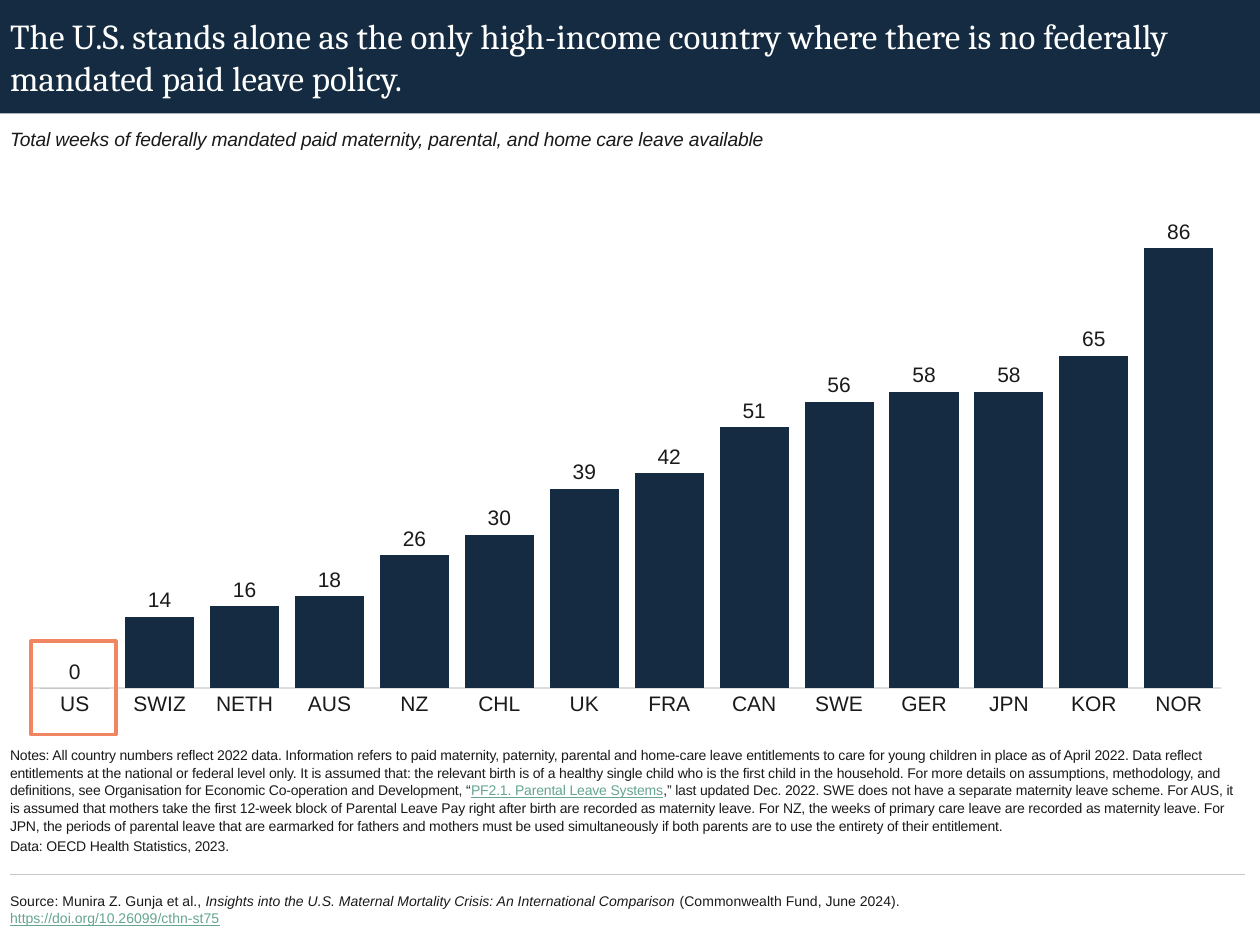
import pptx
import pptx.chart.data
import pptx.dml.color
import pptx.enum.chart
import pptx.enum.shapes
import pptx.enum.text
import pptx.oxml
import pptx.oxml.ns
import pptx.util
from pptx.util import Inches, Pt

RGBColor = pptx.dml.color.RGBColor
NAVY = RGBColor(0x14, 0x2B, 0x41)
INK = RGBColor(0x1A, 0x1A, 0x1A)
GREEN = RGBColor(0x65, 0xA5, 0x91)
ORANGE = RGBColor(0xF0, 0x86, 0x61)
RULE_GREY = RGBColor(0xC6, 0xC6, 0xC6)
AXIS_GREY = RGBColor(0xDD, 0xDD, 0xDD)
WHITE = RGBColor(0xFF, 0xFF, 0xFF)

MARGIN, CONTENT_WIDTH = Inches(0.08), Inches(9.8)
ANCHOR = pptx.enum.text.MSO_ANCHOR

TITLE = ("The U.S. stands alone as the only high-income country where there is "
         "no federally mandated paid leave policy.")
SUBTITLE = ("Total weeks of federally mandated paid maternity, parental, and home "
            "care leave available")
NOTES = [
    [("Notes: All country numbers reflect 2022 data. Information refers to paid maternity, "
      "paternity, parental and home-care leave entitlements to care for young children in "
      "place as of April 2022. Data reflect entitlements at the national or federal level "
      "only. It is assumed that: the relevant birth is of a healthy single child who is the "
      "first child in the household. For more details on assumptions, methodology, and "
      "definitions, see Organisation for Economic Co-operation and Development, “", ""),
     ("PF2.1. Parental Leave Systems", "link"),
     (",” last updated Dec. 2022. SWE does not have a separate maternity leave scheme. For "
      "AUS, it is assumed that mothers take the first 12-week block of Parental Leave Pay "
      "right after birth are recorded as maternity leave. For NZ, the weeks of primary care "
      "leave are recorded as maternity leave. For JPN, the periods of parental leave that are "
      "earmarked for fathers and mothers must be used simultaneously if both parents are to "
      "use the entirety of their entitlement.", "")],
    [("Data: OECD Health Statistics, 2023.", "")],
]
SOURCE = [[
    ("Source: Munira Z. Gunja et al., ", ""),
    ("Insights into the U.S. Maternal Mortality Crisis: An International Comparison", "italic"),
    (" (Commonwealth Fund, June 2024). ", ""),
    ("https://doi.org/10.26099/cthn-st75", "link"),
]]
WEEKS = {"US": 0, "SWIZ": 14, "NETH": 16, "AUS": 18, "NZ": 26, "CHL": 30, "UK": 39,
         "FRA": 42, "CAN": 51, "SWE": 56, "GER": 58, "JPN": 58, "KOR": 65, "NOR": 86}


def set_font(font, name, size, color):
    """Give a font its face, size and colour."""
    font.name, font.size = name, Pt(size)
    font.color.rgb = color


def set_frame(frame, anchor):
    """Make a text frame wrap, without margins or automatic fitting."""
    frame.word_wrap = True
    frame.auto_size = pptx.enum.text.MSO_AUTO_SIZE.NONE
    frame.vertical_anchor = anchor
    frame.margin_left = frame.margin_top = frame.margin_right = frame.margin_bottom = 0


def add_text(slide, box, paragraphs, size, anchor, tracking=0, line_spacing=1.0):
    """Add a text box of paragraphs, each a list of (text, style) runs."""
    frame = slide.shapes.add_textbox(*box).text_frame
    set_frame(frame, anchor)
    for index, runs in enumerate(paragraphs):
        paragraph = frame.add_paragraph() if index else frame.paragraphs[0]
        paragraph.line_spacing = line_spacing
        if index:
            paragraph.space_before = Pt(size * 0.2)
        set_font(paragraph.font, "Arial", size, INK)
        for text, style in runs:
            run = paragraph.add_run()
            run.text = text
            if tracking:
                run.font._element.set("spc", str(tracking))
            if style == "link":
                run.font.color.rgb = GREEN
                run.font.underline = True
            elif style == "italic":
                run.font.italic = True


def add_header(slide, box):
    """Place the title over a navy band that fills the box."""
    left, top, width, height = box
    title = slide.shapes.title
    band = slide.shapes.add_shape(pptx.enum.shapes.MSO_SHAPE.RECTANGLE, *box)
    band.shadow.inherit = False
    band.fill.solid()
    band.fill.fore_color.rgb = NAVY
    band.line.fill.background()
    title._element.addprevious(band._element)
    title.left, title.top = left + MARGIN, top
    title.width, title.height = CONTENT_WIDTH, height
    set_frame(title.text_frame, ANCHOR.MIDDLE)
    title.text_frame.text = TITLE
    paragraph = title.text_frame.paragraphs[0]
    paragraph.alignment = pptx.enum.text.PP_ALIGN.LEFT
    set_font(paragraph.font, "Cambria", 20, WHITE)


def set_plot_layout(chart, x, y, width, height):
    """Fix the inner plot area as fractions of the chart."""
    namespace = pptx.oxml.ns.nsdecls("c")
    settings = [("layoutTarget", "inner"), ("xMode", "edge"), ("yMode", "edge"),
                ("x", x), ("y", y), ("w", width), ("h", height)]
    parts = "".join(f'<c:{name} val="{value}"/>' for name, value in settings)
    layout = pptx.oxml.parse_xml(
        f"<c:layout {namespace}><c:manualLayout>{parts}</c:manualLayout></c:layout>")
    plot_area = chart._chartSpace.chart.plotArea
    for existing in plot_area.findall(pptx.oxml.ns.qn("c:layout")):
        plot_area.remove(existing)
    plot_area.insert(0, layout)


def add_leave_chart(slide, box):
    """Add the column chart of paid leave weeks by country."""
    data = pptx.chart.data.CategoryChartData(number_format="#,##0")
    data.categories = list(WEEKS)
    data.add_series("Series 1", list(WEEKS.values()))
    chart = slide.shapes.add_chart(
        pptx.enum.chart.XL_CHART_TYPE.COLUMN_CLUSTERED, *box, data).chart
    chart.has_legend = chart.has_title = False
    set_font(chart.font, "Arial", 10, INK)
    set_plot_layout(chart, 0.018, 0.023, 0.963, 0.9)

    value_axis = chart.value_axis
    value_axis.minimum_scale, value_axis.maximum_scale = 0, 100
    value_axis.has_major_gridlines = False
    value_axis.visible = False
    category_axis = chart.category_axis
    category_axis.major_tick_mark = pptx.enum.chart.XL_TICK_MARK.NONE
    category_axis.format.line.color.rgb = AXIS_GREY
    category_axis.format.line.width = Pt(0.75)
    set_font(category_axis.tick_labels.font, "Arial", 12, INK)

    plot = chart.plots[0]
    plot.gap_width = 23
    plot.vary_by_categories = False
    plot.series[0].format.fill.solid()
    plot.series[0].format.fill.fore_color.rgb = NAVY
    plot.has_data_labels = True
    labels = plot.data_labels
    labels.show_value = True
    labels.number_format, labels.number_format_is_linked = "#,##0", False
    labels.position = pptx.enum.chart.XL_LABEL_POSITION.OUTSIDE_END
    set_font(labels.font, "Arial", 12, INK)


def add_highlight(slide, box):
    """Outline the box in orange."""
    frame = slide.shapes.add_shape(pptx.enum.shapes.MSO_SHAPE.RECTANGLE, *box)
    frame.shadow.inherit = False
    frame.fill.background()
    frame.line.color.rgb = ORANGE
    frame.line.width = Pt(2.25)


def add_footer(slide, box):
    """Add the rule along the top of the box and the source below it."""
    left, top, width, height = box
    rule = slide.shapes.add_connector(
        pptx.enum.shapes.MSO_CONNECTOR.STRAIGHT, left, top, left + width, top)
    rule.line.color.rgb = RULE_GREY
    rule.line.width = Pt(0.75)
    rule._element.spPr.append(
        pptx.oxml.parse_xml(f'<a:effectLst {pptx.oxml.ns.nsdecls("a")}/>'))
    gap = Inches(0.05)
    add_text(slide, (left, top + gap, Inches(7.25), height - gap), SOURCE, 8, ANCHOR.MIDDLE)


def main():
    """Build the paid leave slide and save it."""
    presentation = pptx.Presentation()
    presentation.slide_width, presentation.slide_height = Inches(10), Inches(7.5)
    slide = presentation.slides.add_slide(presentation.slide_layouts[5])
    add_header(slide, (0, 0, presentation.slide_width, Inches(0.9)))
    add_text(slide, (MARGIN, Inches(0.97), CONTENT_WIDTH, Inches(0.27)),
             [[(SUBTITLE, "italic")]], 11, ANCHOR.MIDDLE, tracking=-10)
    add_leave_chart(slide, (MARGIN, Inches(1.3), CONTENT_WIDTH, Inches(4.51)))
    add_highlight(slide, (Inches(0.25), Inches(5.09), Inches(0.67), Inches(0.74)))
    add_text(slide, (MARGIN, Inches(6.28), CONTENT_WIDTH, Inches(0.5)),
             NOTES, 8, ANCHOR.BOTTOM, tracking=-10, line_spacing=1.05)
    add_footer(slide, (MARGIN, Inches(6.94), CONTENT_WIDTH, Inches(0.51)))
    presentation.save("out.pptx")


if __name__ == "__main__":
    main()
